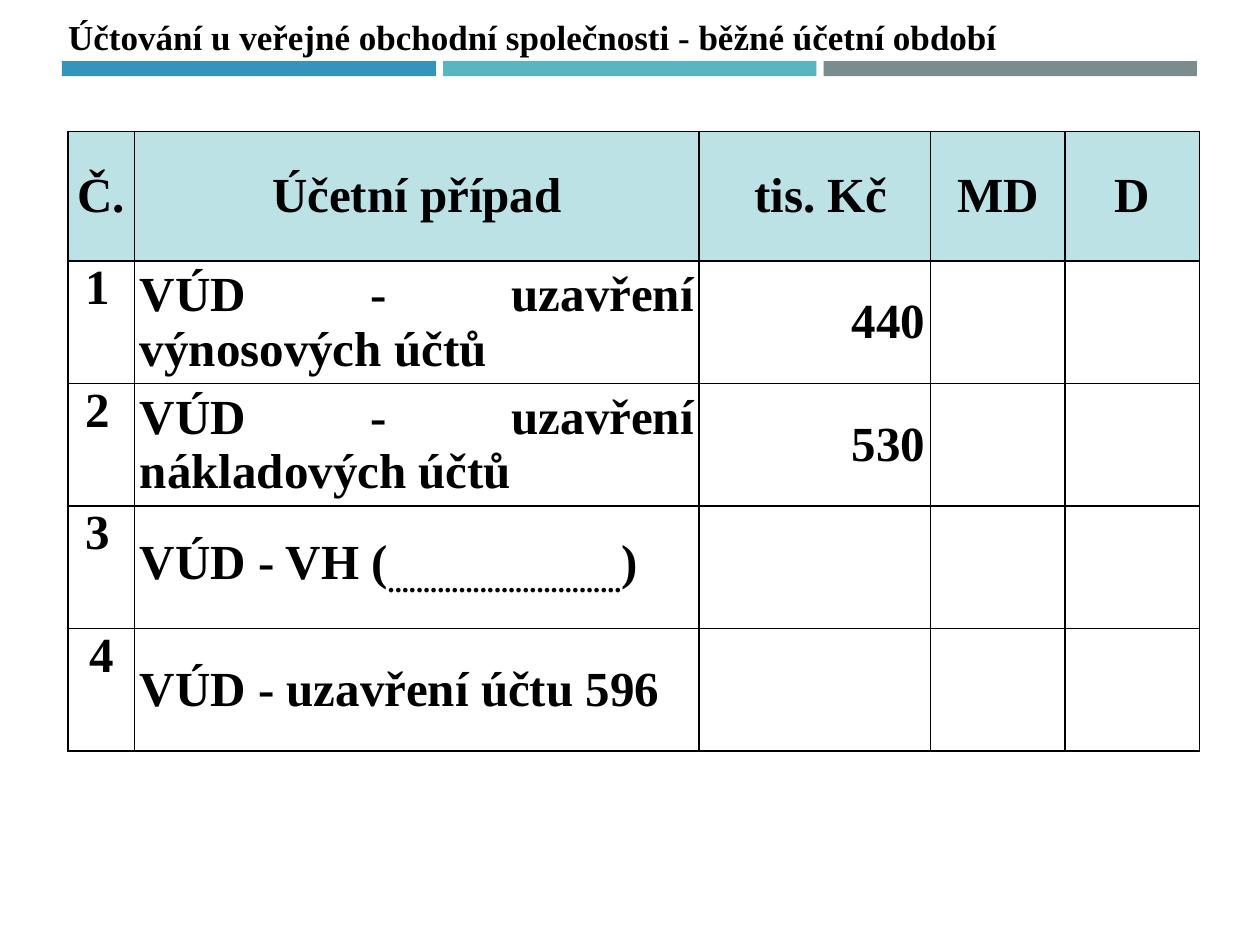
"""Build the accounting slide for a general partnership."""
from dataclasses import dataclass

import lxml.etree
import pptx
import pptx.dml.color
import pptx.enum.shapes
import pptx.enum.text
import pptx.oxml.ns
import pptx.util

Pt = pptx.util.Pt
RGB = pptx.dml.color.RGBColor.from_string
ALIGN = pptx.enum.text.PP_ALIGN
ANCHOR = pptx.enum.text.MSO_ANCHOR


@dataclass(frozen=True)
class Theme:
    font: str = "Times New Roman"
    title_size: float = 20
    cell_size: float = 28
    text: str = "000000"
    header: str = "BCE2E6"
    border: str = "000000"
    border_width: float = 1


@dataclass(frozen=True)
class Bar:
    left: float
    width: float
    color: str


@dataclass(frozen=True)
class Entry:
    number: str
    case: tuple[str, ...]
    amount: str = ""
    number_align: ALIGN = ALIGN.LEFT


THEME = Theme()
BAR_TOP, BAR_HEIGHT = 35, 8.5
BARS = (
    Bar(35.4, 213.8, "3494BA"),
    Bar(253.2, 213.4, "58B6C0"),
    Bar(470.6, 213.4, "7A8C8E"),
)
HEADERS = ("Č.", "Účetní případ", " tis. Kč", "MD", "D")
ENTRIES = (
    Entry(" 1", ("VÚD - uzavření výnosových účtů",), "440"),
    Entry(" 2", ("VÚD - uzavření nákladových účtů",), "530"),
    Entry(" 3", ("VÚD - VH (", "." * 33, ")")),
    Entry("4", ("VÚD - uzavření účtu 596",), number_align=ALIGN.CENTER),
)
COLUMN_WIDTHS = (38.2, 322.4, 132.4, 76.8, 76.8)
HEADER_HEIGHT, ROW_HEIGHT = 74.2, 70


def add_run(p, text: str, size: float):
    """Add a bold run in the theme font."""
    r = p.add_run()
    r.text = text
    for name, value in {"name": THEME.font, "size": Pt(size), "bold": True}.items():
        setattr(r.font, name, value)
    r.font.color.rgb = RGB(THEME.text)
    return r


def add_title(s, text: str) -> None:
    """Place and format the title placeholder."""
    sp = s.shapes.title
    box = {"left": 31.7, "top": 5, "width": 549.4, "height": 31.7}
    for name, value in box.items():
        setattr(sp, name, Pt(value))
    tf = sp.text_frame
    frame = {
        "word_wrap": False,
        "auto_size": pptx.enum.text.MSO_AUTO_SIZE.SHAPE_TO_FIT_TEXT,
        "vertical_anchor": ANCHOR.TOP,
    }
    for name, value in frame.items():
        setattr(tf, name, value)
    p = tf.paragraphs[0]
    p.alignment = ALIGN.LEFT
    add_run(p, text, THEME.title_size)


def add_bar(s, bar: Bar) -> None:
    """Draw one coloured bar under the title."""
    sp = s.shapes.add_shape(
        pptx.enum.shapes.MSO_SHAPE.RECTANGLE,
        Pt(bar.left), Pt(BAR_TOP), Pt(bar.width), Pt(BAR_HEIGHT),
    )
    sp.shadow.inherit = False
    sp.fill.solid()
    sp.fill.fore_color.rgb = RGB(bar.color)
    sp.line.fill.background()


def add_borders(cell) -> None:
    """Outline all four sides of a cell."""
    qn = pptx.oxml.ns.qn
    tc_pr = cell._tc.get_or_add_tcPr()
    for side in ("lnL", "lnR", "lnT", "lnB"):
        ln = lxml.etree.SubElement(tc_pr, qn(f"a:{side}"), w=str(Pt(THEME.border_width)))
        fill = lxml.etree.SubElement(ln, qn("a:solidFill"))
        lxml.etree.SubElement(fill, qn("a:srgbClr"), val=THEME.border)


def fill_cell(cell, texts: tuple[str, ...], align: ALIGN, anchor: ANCHOR, color: str = "") -> None:
    """Format a cell and write its runs, lowering dotted blanks."""
    layout = {
        "margin_left": Pt(3), "margin_right": Pt(3),
        "margin_top": 0, "margin_bottom": 0, "vertical_anchor": anchor,
    }
    for name, value in layout.items():
        setattr(cell, name, value)
    add_borders(cell)
    if color:
        cell.fill.solid()
        cell.fill.fore_color.rgb = RGB(color)
    else:
        cell.fill.background()
    p = cell.text_frame.paragraphs[0]
    p.alignment = align
    for text in filter(None, texts):
        r = add_run(p, text, THEME.cell_size)
        if not text.strip("."):
            r.font._rPr.set("baseline", "-25000")


def add_entries(s) -> None:
    """Build the table of accounting cases."""
    height = HEADER_HEIGHT + ROW_HEIGHT * len(ENTRIES)
    table = s.shapes.add_table(
        len(ENTRIES) + 1, len(HEADERS),
        Pt(38.8), Pt(75), Pt(sum(COLUMN_WIDTHS)), Pt(height),
    ).table
    table.first_row = table.horz_banding = False
    for column, width in zip(table.columns, COLUMN_WIDTHS):
        column.width = Pt(width)
    for i, row in enumerate(table.rows):
        row.height = Pt(ROW_HEIGHT if i else HEADER_HEIGHT)
    for cell, text in zip(table.rows[0].cells, HEADERS):
        fill_cell(cell, (text,), ALIGN.CENTER, ANCHOR.MIDDLE, THEME.header)
    for i, entry in enumerate(ENTRIES, 1):
        contents = (
            ((entry.number,), entry.number_align, ANCHOR.TOP),
            (entry.case, ALIGN.JUSTIFY, ANCHOR.MIDDLE),
            ((entry.amount,), ALIGN.RIGHT, ANCHOR.MIDDLE),
            ((), ALIGN.LEFT, ANCHOR.TOP),
            ((), ALIGN.LEFT, ANCHOR.TOP),
        )
        for cell, content in zip(table.rows[i].cells, contents):
            fill_cell(cell, *content)


def main() -> None:
    """Create and save the presentation."""
    prs = pptx.Presentation()
    prs.slide_width, prs.slide_height = Pt(720), Pt(540)
    s = prs.slides.add_slide(prs.slide_layouts.get_by_name("Title Only"))
    for bar in BARS:
        add_bar(s, bar)
    add_title(s, "Účtování u veřejné obchodní společnosti - běžné účetní období")
    add_entries(s)
    prs.save("out.pptx")


if __name__ == "__main__":
    main()
